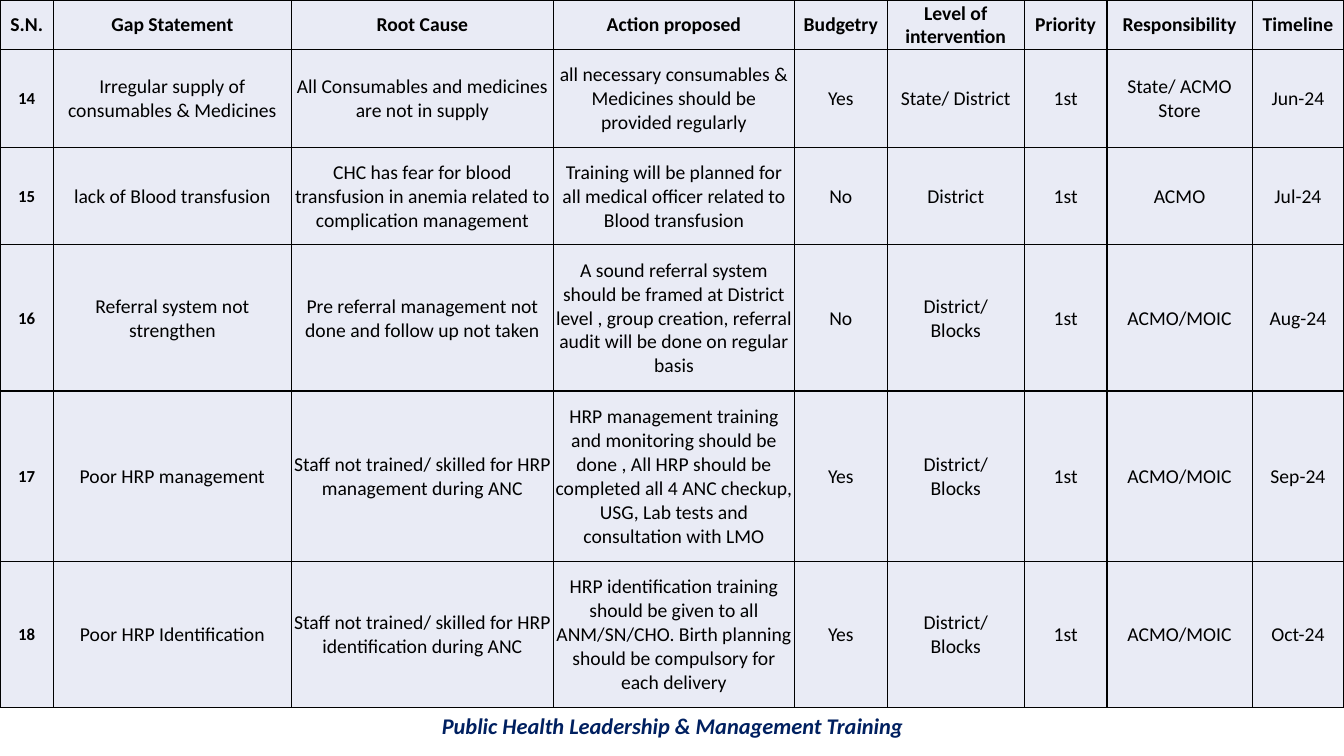
from dataclasses import astuple, dataclass

import lxml.etree
import pptx
import pptx.dml.color
import pptx.enum.text
import pptx.oxml.ns
import pptx.table
import pptx.text.text
import pptx.util


@dataclass(frozen=True)
class Theme:
    font: str = "Calibri"
    ink: str = "000000"
    navy: str = "002060"
    cell_fill: str = "E9EBF5"
    body: int = 14
    number: int = 12
    footer: int = 16
    border: int = 1


@dataclass(frozen=True)
class GapRow:
    number: str
    gap: str
    cause: str
    action: str
    budget: str
    level: str
    priority: str
    responsible: str
    timeline: str


THEME = Theme()
WIDTH, HEIGHT = pptx.util.Inches(13.33), pptx.util.Inches(7.5)
TABLE_SHARE = 0.936
COLUMN_WEIGHTS = (0.53, 2.36, 2.6, 2.39, 0.92, 1.36, 0.82, 1.44, 0.91)
ROW_WEIGHTS = (0.49, 0.97, 0.97, 1.45, 1.69, 1.45)
CELL_INSET = pptx.util.Inches(0.01)

ROWS = (
    GapRow("S.N.", "Gap Statement", "Root Cause", "Action proposed", "Budgetry",
           "Level of intervention", "Priority", "Responsibility", "Timeline"),
    GapRow("14", "Irregular supply of consumables & Medicines",
           "All Consumables and medicines are not in supply",
           "all necessary consumables & Medicines should be provided regularly",
           "Yes", "State/ District", "1st", "State/ ACMO Store", "Jun-24"),
    GapRow("15", "lack of Blood transfusion",
           "CHC has fear for blood transfusion in anemia related to complication management",
           "Training will be planned for all medical officer related to Blood transfusion",
           "No", "District", "1st", "ACMO", "Jul-24"),
    GapRow("16", "Referral system not strengthen",
           "Pre referral management not done and follow up not taken",
           "A sound referral system should be framed at District level , group creation, "
           "referral audit will be done on regular basis",
           "No", "District/\nBlocks", "1st", "ACMO/MOIC", "Aug-24"),
    GapRow("17", "Poor HRP management",
           "Staff not trained/ skilled for HRP management during ANC",
           "HRP management training and monitoring should be done , All HRP should be "
           "completed all 4 ANC checkup, USG, Lab tests and consultation with LMO",
           "Yes", "District/\nBlocks", "1st", "ACMO/MOIC", "Sep-24"),
    GapRow("18", "Poor HRP Identification",
           "Staff not trained/ skilled for HRP identification during ANC",
           "HRP identification training should be given to all ANM/SN/CHO. "
           "Birth planning should be compulsory for each delivery",
           "Yes", "District/\nBlocks", "1st", "ACMO/MOIC", "Oct-24"),
)


def rgb(colour: str) -> pptx.dml.color.RGBColor:
    return pptx.dml.color.RGBColor.from_string(colour)


def write(tf: pptx.text.text.TextFrame, text: str, size: int, colour: str,
          bold: bool, italic: bool = False) -> None:
    """Fill a frame with centred text, one paragraph a line."""
    tf.text = text
    tf.word_wrap = True
    for p in tf.paragraphs:
        p.alignment = pptx.enum.text.PP_ALIGN.CENTER
        for r in p.runs:
            r.font.name = THEME.font
            r.font.size = pptx.util.Pt(size)
            r.font.bold = bold
            r.font.italic = italic
            r.font.color.rgb = rgb(colour)


def add_borders(cell: pptx.table._Cell) -> None:
    qn = pptx.oxml.ns.qn
    tc_pr = cell._tc.get_or_add_tcPr()
    for side in ("a:lnL", "a:lnR", "a:lnT", "a:lnB"):
        ln = lxml.etree.SubElement(tc_pr, qn(side), w=str(pptx.util.Pt(THEME.border)))
        fill = lxml.etree.SubElement(ln, qn("a:solidFill"))
        lxml.etree.SubElement(fill, qn("a:srgbClr"), val=THEME.ink)


def style_cell(cell: pptx.table._Cell) -> None:
    add_borders(cell)
    cell.fill.solid()
    cell.fill.fore_color.rgb = rgb(THEME.cell_fill)
    cell.vertical_anchor = pptx.enum.text.MSO_ANCHOR.MIDDLE
    cell.margin_left = cell.margin_right = cell.margin_top = CELL_INSET
    cell.margin_bottom = 0


def add_gap_table(slide: pptx.slide.Slide) -> None:
    height = int(HEIGHT * TABLE_SHARE)
    table = slide.shapes.add_table(len(ROWS), len(COLUMN_WEIGHTS), 0, 0, WIDTH, height).table
    for column, weight in zip(table.columns, COLUMN_WEIGHTS):
        column.width = int(WIDTH * weight / sum(COLUMN_WEIGHTS))
    for row, weight in zip(table.rows, ROW_WEIGHTS):
        row.height = int(height * weight / sum(ROW_WEIGHTS))
    for i, gap_row in enumerate(ROWS):
        for j, text in enumerate(astuple(gap_row)):
            cell = table.cell(i, j)
            style_cell(cell)
            size = THEME.number if i > 0 and j == 0 else THEME.body
            write(cell.text_frame, text, size, THEME.ink, bold=i == 0 or j == 0)


def add_footer(slide: pptx.slide.Slide) -> None:
    sp = slide.shapes.add_textbox(int(WIDTH * 0.069), int(HEIGHT * TABLE_SHARE),
                                  int(WIDTH * 0.863), int(HEIGHT * 0.049))
    write(sp.text_frame, "Public Health Leadership & Management Training",
          THEME.footer, THEME.navy, bold=True, italic=True)


def main() -> None:
    prs = pptx.Presentation()
    prs.slide_width, prs.slide_height = WIDTH, HEIGHT
    slide = prs.slides.add_slide(prs.slide_layouts[6])
    add_footer(slide)
    add_gap_table(slide)
    prs.save("out.pptx")


if __name__ == "__main__":
    main()
